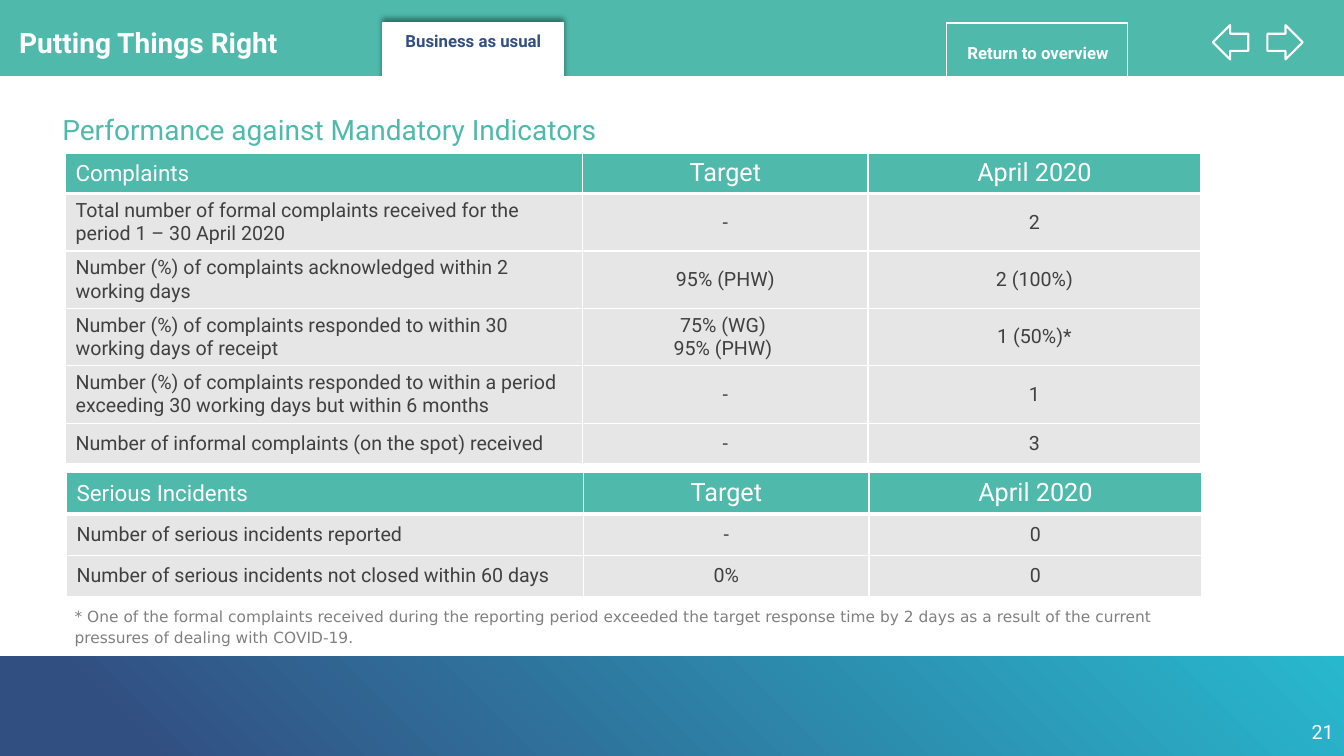
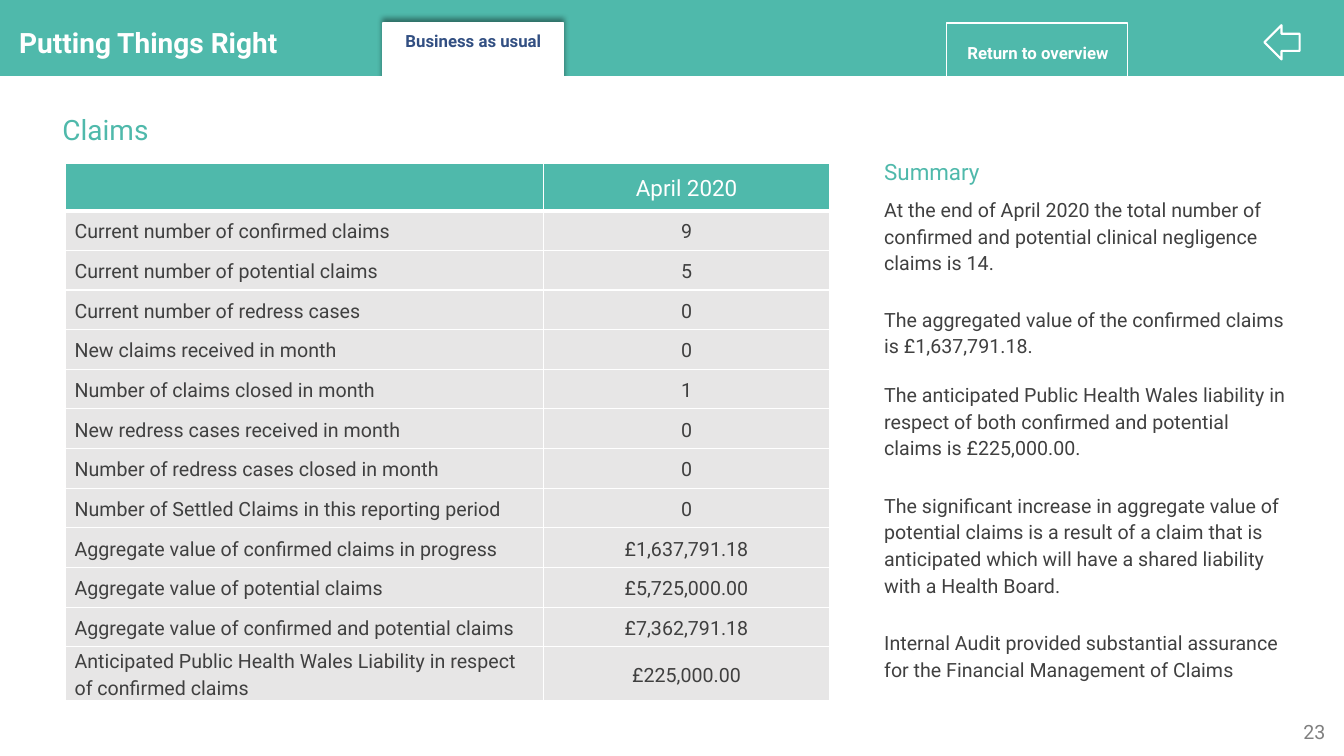
from lxml import etree
from pptx import Presentation
from pptx import util as u
from pptx.dml import color
from pptx.enum import shapes, text
from pptx.oxml import ns

# Shared style
TEAL, NAVY, CYAN = "4FB9AB", "324F82", "28B8CE"
WHITE, PALE, GREY, DARK = "FFFFFF", "E7E6E6", "808080", "404040"
FONT = "Roboto"
LEFT, MID = text.PP_ALIGN.LEFT, text.PP_ALIGN.CENTER
TOP, HALF = text.MSO_ANCHOR.TOP, text.MSO_ANCHOR.MIDDLE
BOX = shapes.MSO_SHAPE.RECTANGLE
BACK, NEXT = shapes.MSO_SHAPE.LEFT_ARROW, shapes.MSO_SHAPE.RIGHT_ARROW
WIDE, HIGH = 13.33, 7.5


def rgb(code):
    return color.RGBColor.from_string(code)


def put(item, values):
    for name, value in values.items():
        setattr(item, name, value)


def inset(item, pad):
    side, top = map(u.Inches, pad)
    put(item, {"margin_left": side, "margin_right": side,
               "margin_top": top, "margin_bottom": top})


def node(parent, tag, **values):
    item = etree.SubElement(parent, ns.qn("a:" + tag))
    for name, value in values.items():
        item.set(name, str(value))
    return item


class Deck:
    def __init__(self):
        self.file = Presentation()
        put(self.file, {"slide_width": u.Inches(WIDE), "slide_height": u.Inches(HIGH)})
        self.slide = None

    def shape(self, kind, at, fill=None, line=None, width=1):
        item = self.slide.shapes.add_shape(kind, *map(u.Inches, at))
        item.shadow.inherit = False
        self.paint(item, fill)
        if line:
            item.line.color.rgb = rgb(line)
            item.line.width = u.Pt(width)
        else:
            item.line.fill.background()
        return item

    def paint(self, item, fill):
        if fill:
            item.fill.solid()
            item.fill.fore_color.rgb = rgb(fill)
        else:
            item.fill.background()

    def style(self, para, size, tint, bold=False, align=LEFT, face=FONT, **gaps):
        put(para, {"alignment": align, **gaps})
        put(para.font, {"size": u.Pt(size), "bold": bold, "name": face})
        para.font.color.rgb = rgb(tint)

    def label(self, words, at, size, tint, pad=(0, 0), **look):
        frame = self.slide.shapes.add_textbox(*map(u.Inches, at)).text_frame
        frame.word_wrap = True
        inset(frame, pad)
        frame.text = words
        self.style(frame.paragraphs[0], size, tint, **look)

    # Tables
    def grid(self, at, cols, highs):
        place = [*at, sum(cols), sum(highs)]
        grid = self.slide.shapes.add_table(
            len(highs), len(cols), *map(u.Inches, place)).table
        put(grid, {"first_row": False, "horz_banding": False})
        for col, width in zip(grid.columns, cols):
            col.width = u.Inches(width)
        for row, high in zip(grid.rows, highs):
            row.height = u.Inches(high)
        return grid

    def cell(self, cell, fill, pad, anchor, edges):
        props = cell._tc.get_or_add_tcPr()
        for side, width in zip("LRTB", edges):
            line = node(props, "ln" + side, w=u.Pt(width))
            node(node(line, "solidFill"), "srgbClr", val=WHITE)
        self.paint(cell, fill)
        inset(cell, pad)
        cell.vertical_anchor = anchor

    def table(self, rows, at, cols, highs, heads, pad=(0.1, 0.05), **look):
        grid = self.grid(at, cols, highs)
        for r, row in enumerate(rows):
            for c, words in enumerate(row):
                cell = grid.cell(r, c)
                self.cell(cell, PALE if r else TEAL, pad, HALF,
                          (1, 1, 3 if r == 1 else 1, 1 if r else 3))
                cell.text = words
                for para in cell.text_frame.paragraphs:
                    self.style(para, 14 if r else heads[c], DARK if r else WHITE,
                               align=MID if c else LEFT, **look)

    def note(self, parts, at, width, high, **look):
        """Each part holds words, size, colour and space after."""
        cell = self.grid(at, [width], [high]).cell(0, 0)
        self.cell(cell, None, (0.12, 0), TOP, (1, 1, 1, 1))
        frame = cell.text_frame
        for i, (words, size, tint, after) in enumerate(parts):
            para = frame.add_paragraph() if i else frame.paragraphs[0]
            para.text = words
            self.style(para, size, tint, space_after=u.Pt(after),
                       line_spacing=1.15, **look)

    # Bands
    def shade(self, item):
        props = item._element.spPr
        glow = node(props.find(ns.qn("a:effectLst")), "outerShdw", blurRad=u.Pt(4),
                    dist=u.Pt(3), dir=270 * 60000, algn="b", rotWithShape=0)
        node(node(glow, "srgbClr", val="000000"), "alpha", val=40000)

    def foot(self):
        band = self.shape(BOX, (0, 6.51, WIDE, 0.99), WHITE)
        band.fill.gradient()
        band.fill.gradient_angle = 45
        for stop, place, tint in zip(band.fill.gradient_stops, (0.1, 1), (NAVY, CYAN)):
            stop.position = place
            stop.color.rgb = rgb(tint)

    def page(self, title, arrows):
        self.slide = self.file.slides.add_slide(self.file.slide_layouts[6])
        self.foot()
        self.shape(BOX, (0, 0, WIDE, 0.83), TEAL)
        self.label("Putting Things Right", (0.19, 0.25, 3.39, 0.34), 20, WHITE, bold=True)
        # The panel hides the lower part of the tab
        self.shade(self.shape(BOX, (3.8, 0.23, 1.79, 1.06), WHITE, WHITE))
        self.shape(BOX, (0, 0.76, WIDE, 1.46), WHITE, WHITE)
        self.label("Business as usual", (3.97, 0.31, 1.45, 0.4), 12, NAVY,
                   bold=True, align=MID)
        self.label(title, (0.52, 1.07, 9.31, 0.44), 20, TEAL, (0.1, 0.05))
        for kind, left in arrows:
            self.shape(kind, (left, 0.25, 0.35, 0.34), line=WHITE, width=1.5)
        self.shape(BOX, (9.39, 0.23, 1.79, 1.06), line=WHITE)
        self.label("Return to overview", (9.24, 0.42, 2.11, 0.2), 12, WHITE,
                   bold=True, align=MID)

    def number(self, words, left, tint):
        self.label(words, (left, 7.09, 0.46, 0.34), 14, tint, (0.1, 0.05))


def main():
    deck = Deck()

    # Indicators
    deck.page("Performance against Mandatory Indicators", [(NEXT, 12.57), (BACK, 12.03)])
    deck.number("21", 12.91, WHITE)
    cols, heads = (5.13, 2.83, 3.3), (16, 18, 18)
    deck.table([
        ("Complaints", "Target", "April 2020"),
        ("Total number of formal complaints received for the period 1 – 30 April 2020",
         "-", "2"),
        ("Number (%) of complaints acknowledged within 2 working days",
         "95% (PHW)", "2 (100%)"),
        ("Number (%) of complaints responded to within 30 working days of receipt",
         "75% (WG) \n95% (PHW) ", "1 (50%)*"),
        ("Number (%) of complaints responded to within a period exceeding "
         "30 working days but within 6 months", "-", "1"),
        ("Number of informal complaints (on the spot) received", "-", "3"),
    ], (0.65, 1.52), cols, [0.4] + [0.57] * 4 + [0.4], heads)
    deck.table([
        ("Serious Incidents", "Target", "April 2020"),
        ("Number of serious incidents reported", "-", "0"),
        ("Number of serious incidents not closed within 60 days", "0%", "0"),
    ], (0.66, 4.69), cols, [0.41] * 3, heads)
    deck.note([("* One of the formal complaints received during the reporting period "
                "exceeded the target response time by 2 days as a result of the current "
                "pressures of dealing with COVID-19.", 11, GREY, 0)],
              (0.62, 6.01), 11.5, 0.42, face="DejaVu Sans")

    # Claims, where a white panel replaces the lower band
    deck.page("Claims", [(BACK, 12.54)])
    deck.shape(BOX, (0, 6.23, WIDE, 1.27), WHITE, WHITE)
    deck.number("23", 12.83, GREY)
    deck.table([
        ("", "April 2020"),
        ("Current number of confirmed claims", "9"),
        ("Current number of potential claims", "5"),
        ("Current number of redress cases", "0"),
        ("New claims received in month", "0"),
        ("Number of claims closed in month", "1"),
        ("New redress cases received in month", "0"),
        ("Number of redress cases closed in month", "0"),
        ("Number of Settled Claims in this reporting period", "0"),
        ("Aggregate value of confirmed claims in progress", "£1,637,791.18"),
        ("Aggregate value of potential claims", "£5,725,000.00"),
        ("Aggregate value of confirmed and potential claims", "£7,362,791.18"),
        ("Anticipated Public Health Wales Liability in respect of confirmed claims",
         "£225,000.00"),
    ], (0.65, 1.62), (4.74, 2.84), [0.47] + [4.33 / 11] * 11 + [0.52], (16, 16),
        (0.09, 0), line_spacing=1.15)
    deck.note([
        ("Summary", 16, TEAL, 7),
        ("At the end of April 2020 the total number of confirmed and potential "
         "clinical negligence claims is 14.", 14, DARK, 21),
        ("The aggregated value of the confirmed claims is £1,637,791.18.", 14, DARK, 16),
        ("The anticipated Public Health Wales liability in respect of both confirmed "
         "and potential claims is £225,000.00.", 14, DARK, 22),
        ("The significant increase in aggregate value of potential claims is a result "
         "of a claim that is anticipated which will have a shared liability with a "
         "Health Board.", 14, DARK, 22),
        ("Internal Audit provided substantial assurance for the Financial Management "
         "of Claims", 14, DARK, 0),
    ], (8.65, 1.55), 4.26, 5.32)

    deck.file.save("out.pptx")


if __name__ == "__main__":
    main()
